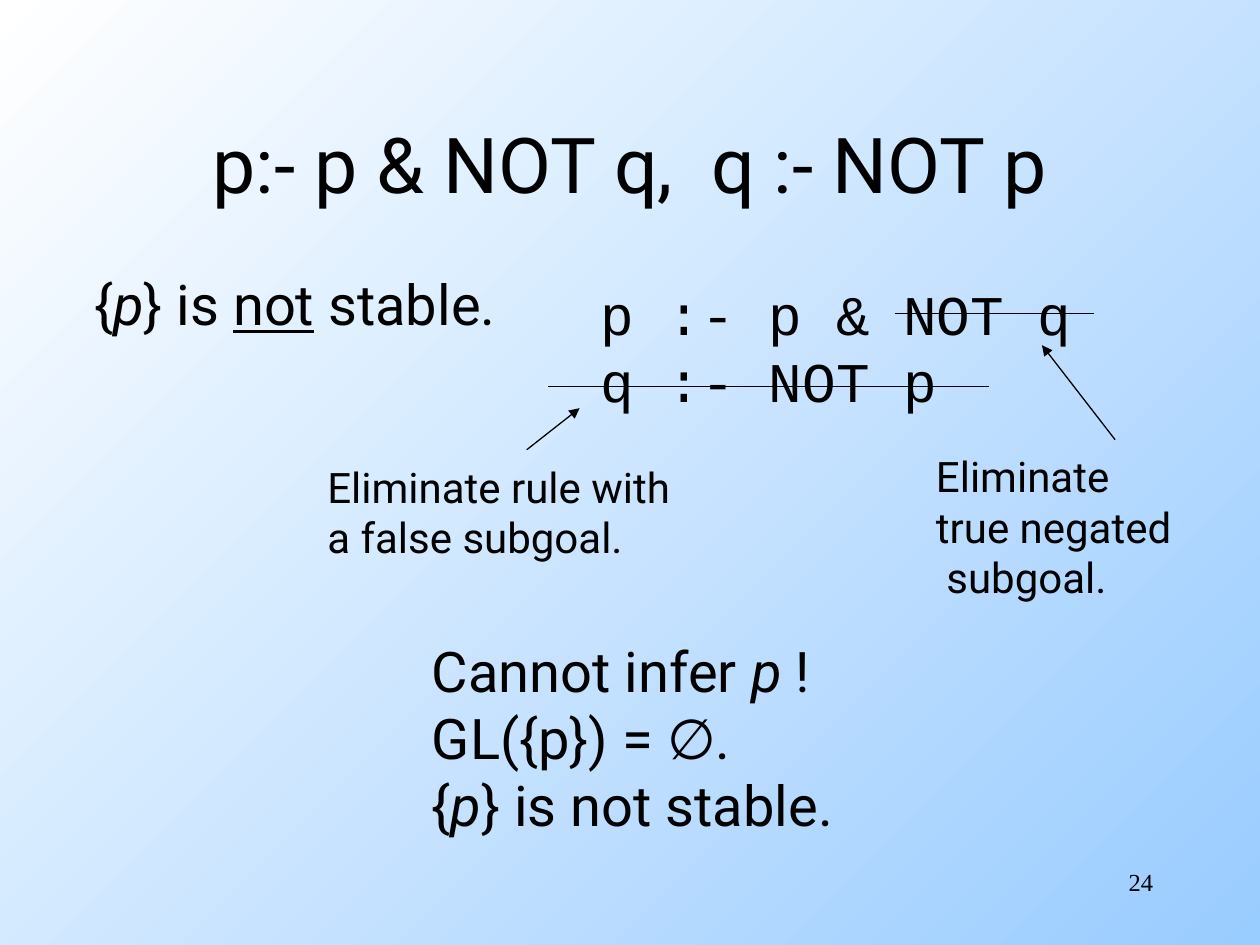
from dataclasses import dataclass

from lxml.etree import SubElement
from pptx import Presentation
from pptx.dml.color import RGBColor as RGB
from pptx.enum.shapes import MSO_CONNECTOR as LINK
from pptx.enum.text import MSO_ANCHOR as ANCHOR, MSO_AUTO_SIZE as FIT, PP_ALIGN as ALIGN
from pptx.oxml.ns import qn
from pptx.util import Inches, Pt


@dataclass(frozen=True)
class Theme:
    ink: RGB = RGB(0, 0, 0)
    start: RGB = RGB(0xFF, 0xFF, 0xFF)
    end: RGB = RGB(0x99, 0xCC, 0xFF)
    sans: str = "Roboto"
    mono: str = "Courier New"
    serif: str = "Times New Roman"
    title: int = 44
    body: int = 32
    note: int = 24
    page: int = 14
    line: float = 0.75


class Pen:
    def __init__(self, slide, theme):
        self.slide, self.theme = slide, theme

    def back(self):
        fill = self.slide.background.fill
        fill.gradient()
        fill.gradient_angle = 315
        for stop, color in zip(fill.gradient_stops, (self.theme.start, self.theme.end)):
            stop.color.rgb = color

    def style(self, run, size, face):
        font = run.font
        font.size, font.name = Pt(size), face
        font.color.rgb = self.theme.ink

    def title(self, text, box):
        shape = self.slide.shapes.title
        shape.left, shape.top, shape.width, shape.height = map(Inches, box)
        frame = shape.text_frame
        frame.text = text
        frame.vertical_anchor = ANCHOR.MIDDLE
        para = frame.paragraphs[0]
        para.alignment = ALIGN.CENTER
        self.style(para.runs[0], self.theme.title, self.theme.sans)

    def text(self, lines, box, size, face, home=None, align=ALIGN.LEFT, wrap=False):
        """Write lines; each is a string or a list of (text, "i" / "u" / "") parts."""
        shapes = (home or self.slide).shapes
        frame = shapes.add_textbox(*map(Inches, box)).text_frame
        frame.word_wrap = wrap
        frame.auto_size = FIT.NONE if wrap else FIT.SHAPE_TO_FIT_TEXT
        for i, line in enumerate(lines):
            para = frame.add_paragraph() if i else frame.paragraphs[0]
            para.alignment = align
            parts = [(line, "")] if isinstance(line, str) else line
            for words, mark in parts:
                run = para.add_run()
                run.text = words
                self.style(run, size, face)
                run.font.italic = mark == "i"
                run.font.underline = mark == "u"

    def line(self, start, end, home, arrow=False):
        ends = map(Inches, (*start, *end))
        link = home.shapes.add_connector(LINK.STRAIGHT, *ends)
        link.line.color.rgb = self.theme.ink
        link.line.width = Pt(self.theme.line)
        if arrow:
            SubElement(link.line._get_or_add_ln(), qn("a:tailEnd"), type="triangle")
        SubElement(link._element.spPr, qn("a:effectLst"))

    def group(self):
        return self.slide.shapes.add_group_shape()


def main():
    deck = Presentation()
    deck.slide_width, deck.slide_height = Inches(10), Inches(7.5)
    look = Theme()
    pen = Pen(deck.slides.add_slide(deck.slide_layouts[5]), look)

    pen.back()
    pen.text(["24"], (7.17, 6.83, 2.08, 0.5), look.page, look.serif,
             align=ALIGN.RIGHT, wrap=True)
    pen.title("p:- p & NOT q,  q :- NOT p", (0, 0.67, 10, 1.25))
    pen.text([[("{", ""), ("p", "i"), ("} is ", ""), ("not", "u"), (" stable.", "")]],
             (0.65, 2.09, 3.53, 0.63), look.body, look.sans)
    pen.text(["p :- p & NOT q", "q :- NOT p"],
             (4.67, 2.17, 3.94, 1.17), look.body, look.mono)

    rule = pen.group()
    pen.line((4.35, 3.07), (7.85, 3.07), rule)
    pen.text(["Eliminate rule with", "a false subgoal."],
             (2.5, 3.61, 2.93, 0.9), look.note, look.sans, rule)
    pen.line((4.18, 3.57), (4.6, 3.24), rule, arrow=True)

    pen.text([[("Cannot infer ", ""), ("p ", "i"), ("!", "")],
              "GL({p}) = ∅.",
              [("{", ""), ("p", "i"), ("} is not stable.", "")]],
             (3.33, 5, 3.53, 1.7), look.body, look.sans)

    goal = pen.group()
    pen.line((7.1, 2.49), (8.68, 2.49), goal)
    pen.text(["Eliminate", "true negated", " subgoal."],
             (7.33, 3.53, 2.09, 1.3), look.note, look.sans, goal)
    pen.line((8.85, 3.49), (8.27, 2.74), goal, arrow=True)

    deck.save("out.pptx")


if __name__ == "__main__":
    main()
